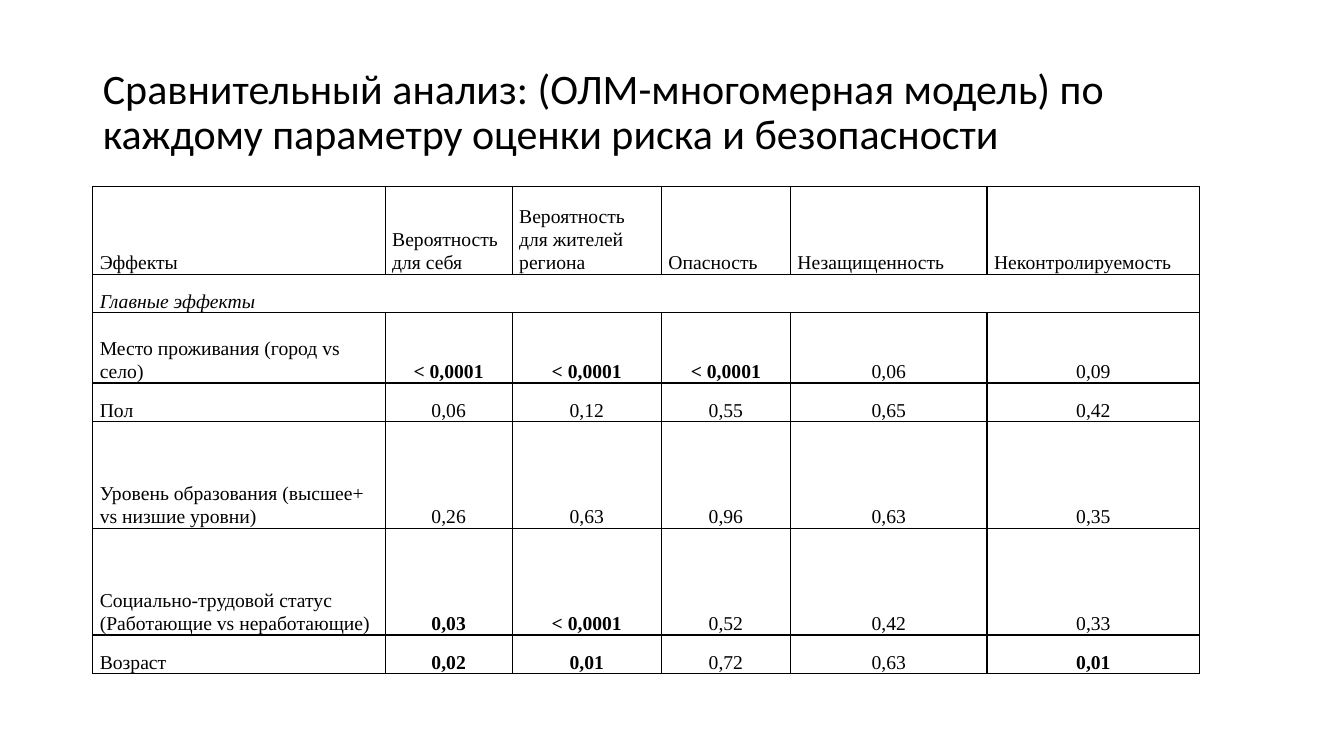
from dataclasses import dataclass

from lxml import etree
from pptx import Presentation
from pptx import util as u
from pptx.dml import color
from pptx.enum import text
from pptx.oxml import ns

PX = 9144
COLORS = {"ink": "000000", "paper": "FFFFFF"}
TITLE = (
    "Сравнительный анализ: (ОЛМ-многомерная модель) по "
    "каждому параметру оценки риска и безопасности"
)
COLUMN_WIDTHS = (290, 126, 148, 128, 195, 211)
SIGNIFICANCE = 0.05


@dataclass(frozen=True)
class Style:
    font: str
    size: int
    spacing: float
    bold: bool = False
    italic: bool = False
    align: text.PP_ALIGN = text.PP_ALIGN.LEFT


@dataclass(frozen=True)
class Effect:
    height: int
    label: str
    values: tuple[str, ...]


HEADER = Effect(87, "Эффекты", (
    "Вероятность для себя", "Вероятность для жителей региона",
    "Опасность", "Незащищенность", "Неконтролируемость",
))
SECTION = Effect(38, "Главные эффекты", ())
EFFECTS = (
    Effect(70, "Место проживания (город vs село)",
           ("< 0,0001", "< 0,0001", "< 0,0001", "0,06", "0,09")),
    Effect(38, "Пол", ("0,06", "0,12", "0,55", "0,65", "0,42")),
    Effect(106, "Уровень образования (высшее+ vs низшие уровни)",
           ("0,26", "0,63", "0,96", "0,63", "0,35")),
    Effect(106, "Социально-трудовой статус (Работающие vs неработающие)",
           ("0,03", "< 0,0001", "0,52", "0,42", "0,33")),
    Effect(38, "Возраст", ("0,02", "0,01", "0,72", "0,63", "0,01")),
)


def px(n: int) -> u.Emu:
    return u.Emu(n * PX)


def rgb(name: str) -> color.RGBColor:
    return color.RGBColor.from_string(COLORS[name])


def write(tf, content: str, style: Style) -> None:
    p = tf.paragraphs[0]
    p.alignment = style.align
    p.line_spacing = style.spacing
    p.space_before = p.space_after = u.Pt(0)
    r = p.add_run()
    r.text = content
    r.font.name = style.font
    r.font.size = u.Pt(style.size)
    r.font.bold = style.bold
    r.font.italic = style.italic
    r.font.color.rgb = rgb("ink")


def add_borders(cell) -> None:
    tc_pr = cell._tc.get_or_add_tcPr()
    for side in ("lnL", "lnR", "lnT", "lnB"):
        ln = etree.SubElement(tc_pr, ns.qn(f"a:{side}"), w=str(u.Pt(1)))
        fill = etree.SubElement(ln, ns.qn("a:solidFill"))
        etree.SubElement(fill, ns.qn("a:srgbClr"), val=COLORS["ink"])


def format_cell(cell) -> None:
    add_borders(cell)
    cell.fill.solid()
    cell.fill.fore_color.rgb = rgb("paper")
    cell.vertical_anchor = text.MSO_ANCHOR.BOTTOM
    cell.margin_left = cell.margin_right = px(7)
    cell.margin_top = cell.margin_bottom = 0


def is_significant(value: str) -> bool:
    return float(value.strip("< ").replace(",", ".")) < SIGNIFICANCE


def cell_style(effect: Effect, col: int) -> Style:
    measured = effect in EFFECTS and col > 0
    return Style(
        "Times New Roman", 14, 1.07,
        bold=measured and is_significant(effect.values[col - 1]),
        italic=effect is SECTION,
        align=text.PP_ALIGN.CENTER if measured else text.PP_ALIGN.LEFT,
    )


def add_title(slide) -> None:
    sp = slide.shapes.title
    sp.left, sp.top, sp.width, sp.height = map(px, (92, 40, 1150, 145))
    tf = sp.text_frame
    tf.word_wrap = True
    tf.auto_size = text.MSO_AUTO_SIZE.NONE
    tf.vertical_anchor = text.MSO_ANCHOR.MIDDLE
    write(tf, TITLE, Style("Calibri", 30, 0.9))


def add_effects_table(slide) -> None:
    effects = (HEADER, SECTION, *EFFECTS)
    width, height = sum(COLUMN_WIDTHS), sum(e.height for e in effects)
    table = slide.shapes.add_table(
        len(effects), len(COLUMN_WIDTHS), px(92), px(185), px(width), px(height)
    ).table
    table.first_row = table.horz_banding = False
    for column, column_width in zip(table.columns, COLUMN_WIDTHS):
        column.width = px(column_width)
    for row, effect in enumerate(effects):
        table.rows[row].height = px(effect.height)
        for cell in table.rows[row].cells:
            format_cell(cell)
        for col, content in enumerate((effect.label, *effect.values)):
            write(table.cell(row, col).text_frame, content, cell_style(effect, col))
    section_row = effects.index(SECTION)
    table.cell(section_row, 0).merge(table.cell(section_row, len(COLUMN_WIDTHS) - 1))


def main() -> None:
    prs = Presentation()
    prs.slide_width, prs.slide_height = px(1333), px(750)
    slide = prs.slides.add_slide(prs.slide_layouts.get_by_name("Title Only"))
    add_title(slide)
    add_effects_table(slide)
    prs.save("out.pptx")


if __name__ == "__main__":
    main()
